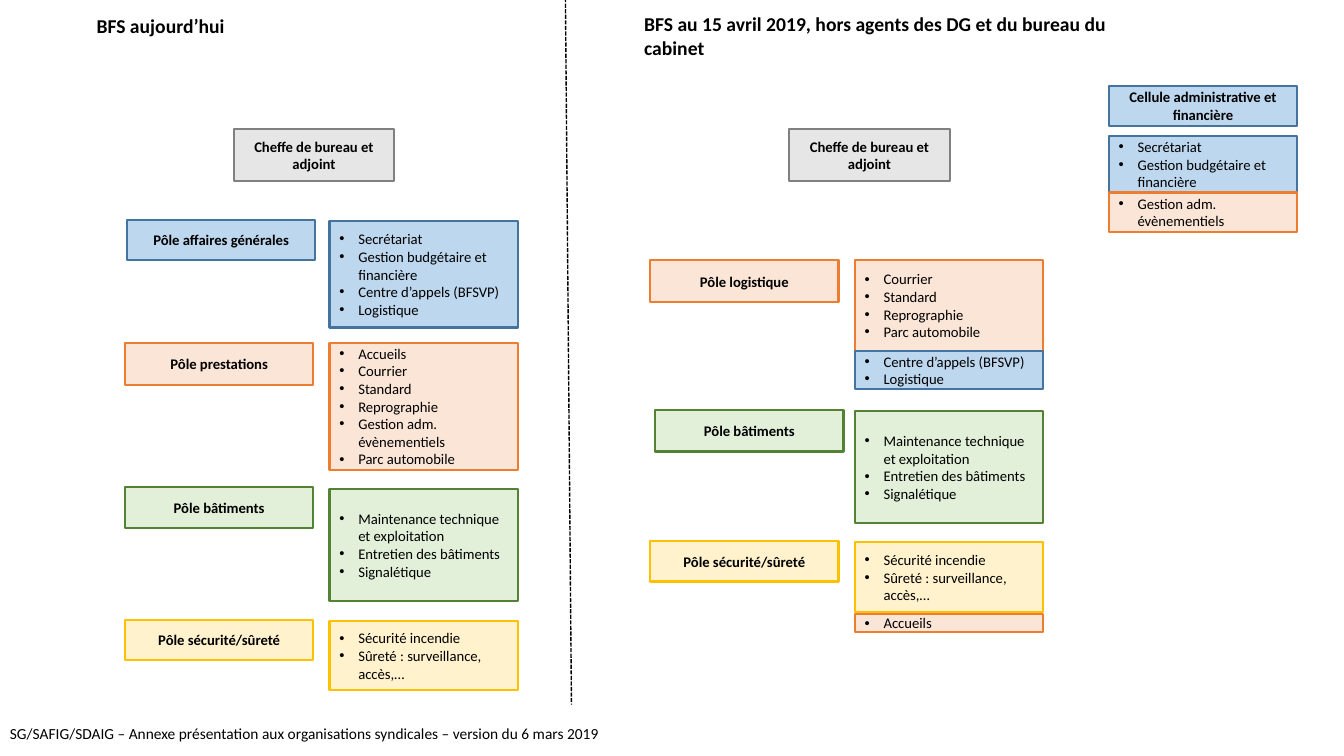
from dataclasses import dataclass, field
from lxml import etree
from pptx import Presentation
from pptx.dml.color import RGBColor as RGB
from pptx.enum.dml import MSO_LINE as Dash
from pptx.enum.shapes import MSO_CONNECTOR as Link, MSO_SHAPE as Form
from pptx.enum.text import MSO_ANCHOR as Anchor, PP_ALIGN as Align
from pptx.oxml.ns import qn
from pptx.util import Pt


@dataclass
class Theme:
    font: str = "Calibri"
    ink: str = "000000"
    title: float = 14
    body: float = 10.5
    foot: float = 11
    # fill and line of each unit
    hues: dict = field(default_factory=lambda: {
        "blue": ("BDD7EE", "43739E"),
        "orange": ("FBE5D6", "ED7D31"),
        "green": ("E2F0D9", "548235"),
        "gold": ("FFF2CC", "FFC000"),
        "grey": ("E7E6E6", "808080"),
    })


theme = Theme()
deck = Presentation()
deck.slide_width, deck.slide_height = Pt(960), Pt(540)
slide = deck.slides.add_slide(deck.slide_layouts[6])
shapes = slide.shapes


def write(frame, lines, size, bold=False, align=Align.LEFT, bullet=False):
    frame.word_wrap = True
    for n, line in enumerate(lines):
        para = frame.paragraphs[0] if n == 0 else frame.add_paragraph()
        para.alignment = align
        if bullet:
            props = para._p.get_or_add_pPr()
            props.set("marL", str(Pt(13.5)))
            props.set("indent", str(-Pt(13.5)))
            etree.SubElement(props, qn("a:buFont"), typeface="Arial")
            etree.SubElement(props, qn("a:buChar"), char="•")
        run = para.add_run()
        run.text = line
        style = {"name": theme.font, "size": Pt(size), "bold": bold}
        for key, value in style.items():
            setattr(run.font, key, value)
        run.font.color.rgb = RGB.from_string(theme.ink)


def draw(x, y, wide, high, hue, lines, **style):
    """Add a coloured box with its text in the middle."""
    box = shapes.add_shape(Form.RECTANGLE, Pt(x), Pt(y), Pt(wide), Pt(high))
    box.shadow.inherit = False
    fill, edge = theme.hues[hue]
    box.fill.solid()
    box.fill.fore_color.rgb = RGB.from_string(fill)
    box.line.color.rgb = RGB.from_string(edge)
    box.line.width = Pt(1.5)
    box.text_frame.vertical_anchor = Anchor.MIDDLE
    write(box.text_frame, lines, theme.body, **style)


# Titles and footer
texts = [
    (61.9, 6.5, 130, 24.5, "BFS aujourd’hui", theme.title, True),
    (453, 5, 374, 41, "BFS au 15 avril 2019, hors agents des DG et du bureau du cabinet",
     theme.title, True),
    (0, 513.4, 470, 20.9, "SG/SAFIG/SDAIG – Annexe présentation aux organisations "
     "syndicales – version du 6 mars 2019", theme.foot, False),
]
for x, y, wide, high, text, size, bold in texts:
    area = shapes.add_textbox(Pt(x), Pt(y), Pt(wide), Pt(high))
    write(area.text_frame, [text], size, bold)

# Heads of the office, today and in April
head = {"bold": True, "align": Align.CENTER}
for x in (167, 563.8):
    draw(x, 92.2, 114.5, 37.4, "grey", ["Cheffe de bureau et adjoint"], **head)

# Names of the units
wide = 134.6
names = [
    (90.7, 157, 28.8, "blue", "Pôle affaires générales"),
    (89.3, 244.8, 30.2, "orange", "Pôle prestations"),
    (89.3, 347.8, 29.5, "green", "Pôle bâtiments"),
    (89.3, 442.8, 28.8, "gold", "Pôle sécurité/sûreté"),
    (464.4, 185.8, 30.2, "orange", "Pôle logistique"),
    (468, 293, 29.5, "green", "Pôle bâtiments"),
    (464.4, 386.6, 28.8, "gold", "Pôle sécurité/sûreté"),
    (792, 61.2, 28.8, "blue", "Cellule administrative et financière"),
]
for x, y, high, hue, name in names:
    draw(x, y, wide, high, hue, [name], **head)

# Tasks of the units, by column
works = ["Maintenance technique et exploitation", "Entretien des bâtiments", "Signalétique"]
safety = ["Sécurité incendie", "Sûreté : surveillance, accès,…"]
office = ["Secrétariat", "Gestion budgétaire et financière"]
calls = ["Centre d’appels (BFSVP)", "Logistique"]
mail = ["Courrier", "Standard", "Reprographie"]
events, cars, desk = "Gestion adm. évènementiels", "Parc automobile", "Accueils"
tasks = {
    235.4: [
        (157.7, 76.3, "blue", office + calls),
        (244.8, 90.7, "orange", [desk, *mail, events, cars]),
        (349.2, 79.9, "green", works),
        (443.5, 49.7, "gold", safety),
    ],
    610.6: [
        (185.8, 64.8, "orange", [*mail, cars]),
        (250.6, 27.4, "blue", calls),
        (293.8, 79.9, "green", works),
        (387.4, 49.7, "gold", safety),
        (438.5, 13, "orange", [desk]),
    ],
    792: [
        (97.2, 40.3, "blue", office),
        (137.5, 28.1, "orange", [events]),
    ],
}
for x, column in tasks.items():
    for y, high, hue, lines in column:
        draw(x, y, wide, high, hue, lines, bullet=True)

# Divider between today and April
rule = shapes.add_connector(Link.STRAIGHT, Pt(403.9), Pt(-1.4), Pt(408.2), Pt(503.3))
rule.line.color.rgb = RGB.from_string(theme.ink)
rule.line.width = Pt(1)
rule.line.dash_style = Dash.SQUARE_DOT
etree.SubElement(rule._element.spPr, qn("a:effectLst"))

deck.save("out.pptx")
